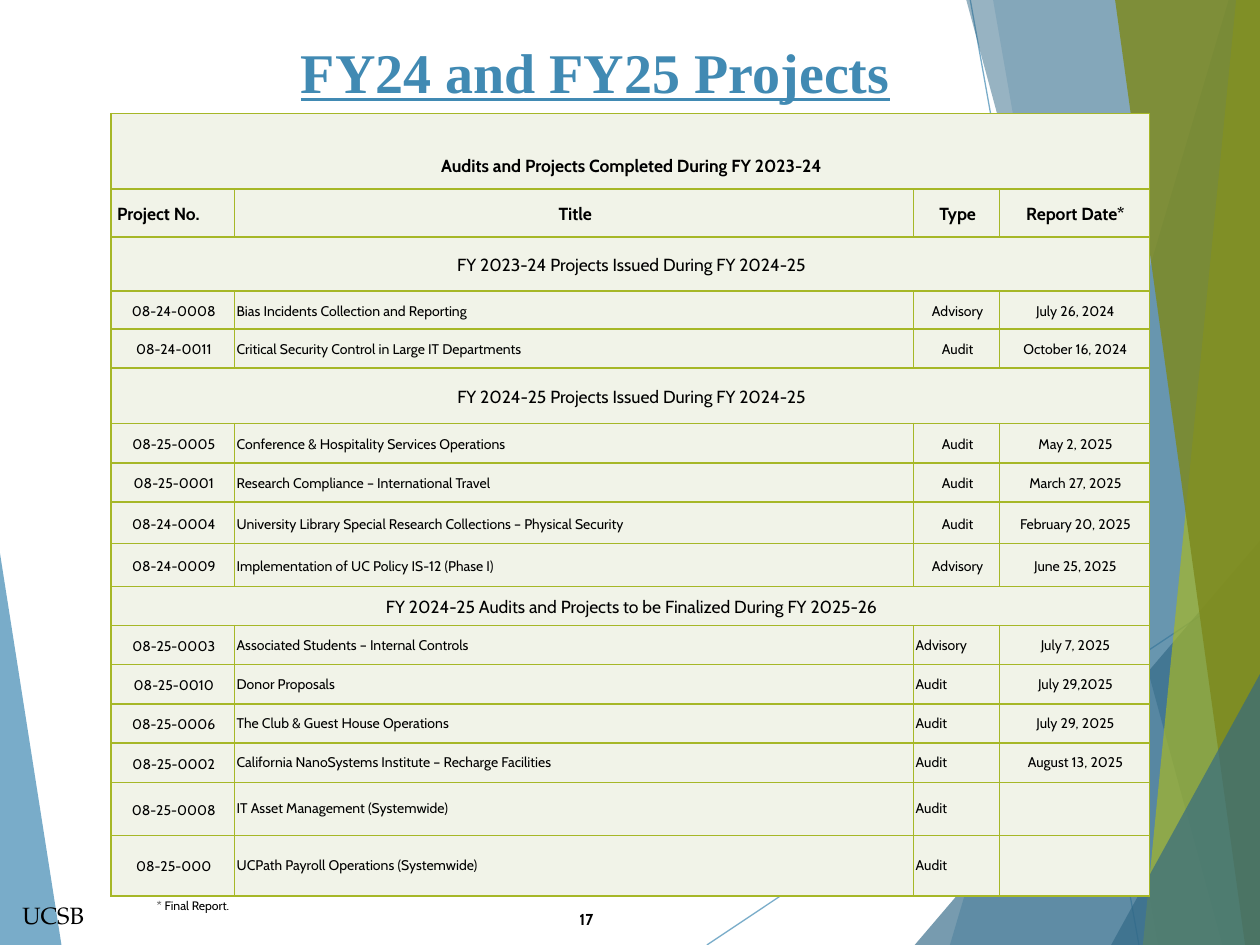
import pptx
import pptx.util
import pptx.dml.color
import pptx.enum.shapes
import pptx.enum.text
import pptx.oxml
import pptx.oxml.ns

Cm = pptx.util.Cm
Align = pptx.enum.text.PP_ALIGN
Anchor = pptx.enum.text.MSO_ANCHOR

COLORS = {
    "blue": "418AB3",
    "navy": "316886",
    "lime": "A6B727",
    "olive": "7D891D",
    "cell": "F1F3E8",
    "ink": "000000",
}
WIDTH, HEIGHT = 25.4, 19.05

FACETS = [
    ("blue", 70, [(0, 11.15), (1.24, 19.05), (0, 19.05)]),
    ("blue", 36, [(24.77, 0), (19.15, 19.05), (25.4, 19.05), (25.4, 0)]),
    ("blue", 20, [(20.02, 0), (23.34, 19.05), (25.4, 19.05), (25.4, 0)]),
    ("navy", 66, [(18.44, 19.05), (25.4, 10.9), (25.4, 19.05)]),
    ("navy", 50, [(19.48, 0), (24.64, 19.05), (25.4, 19.05), (25.4, 0)]),
    ("lime", 70, [(24.92, 0), (23.04, 19.05), (25.4, 19.05), (25.4, 0)]),
    ("olive", 82, [(22.48, 0), (25.1, 19.05), (25.4, 19.05), (25.4, 0)]),
    ("navy", 66, [(22.4, 19.05), (25.4, 13.59), (25.4, 19.05)]),
]
RAYS = [(14.25, 19.05, 25.4, 11.61), (19.56, 0, 22.96, 19.05)]

COLUMNS = [2.49, 13.69, 1.73, 3.02]
HEADER_ROWS = [
    (1.52, ["Audits and Projects Completed During FY 2023-24"]),
    (0.97, ["Project No.", "Title", "Type", "Report Date*"]),
]
ISSUED_ROWS = [
    (1.09, ["FY 2023-24 Projects Issued During FY 2024-25"]),
    (0.76, ["08-24-0008", "Bias Incidents Collection and Reporting", "Advisory", "July 26, 2024"]),
    (0.79, ["08-24-0011", "Critical Security Control in Large IT Departments", "Audit", "October 16, 2024"]),
    (1.12, ["FY 2024-25 Projects Issued During FY 2024-25"]),
    (0.79, ["08-25-0005", "Conference & Hospitality Services Operations", "Audit", "May 2, 2025"]),
    (0.79, ["08-25-0001", "Research Compliance – International Travel", "Audit", "March 27, 2025"]),
    (0.84, ["08-24-0004", "University Library Special Research Collections – Physical Security",
            "Audit", "February 20, 2025"]),
    (0.86, ["08-24-0009", "Implementation of UC Policy IS-12 (Phase I)", "Advisory", "June 25, 2025"]),
]
PENDING_ROWS = [
    (0.79, ["FY 2024-25 Audits and Projects to be Finalized During FY 2025-26"]),
    (0.79, ["08-25-0003", "Associated Students – Internal Controls", "Advisory", "July 7, 2025"]),
    (0.79, ["08-25-0010", "Donor Proposals", "Audit", "July 29,2025"]),
    (0.79, ["08-25-0006", "The Club & Guest House Operations", "Audit", "July 29, 2025"]),
    (0.79, ["08-25-0002", "California NanoSystems Institute – Recharge Facilities", "Audit", "August 13, 2025"]),
    (1.07, ["08-25-0008", "IT Asset Management (Systemwide)", "Audit", ""]),
    (1.22, ["08-25-000", "UCPath Payroll Operations (Systemwide)", "Audit", ""]),
]


def rgb(color):
    return pptx.dml.color.RGBColor.from_string(COLORS[color])


def apply(target, values):
    for name, value in values.items():
        setattr(target, name, value)


def set_alpha(fill_owner, percent):
    color = next(fill_owner.iter(pptx.oxml.ns.qn("a:srgbClr")))
    alpha = pptx.oxml.parse_xml(f'<a:alpha {pptx.oxml.ns.nsdecls("a")} val="{percent * 1000}"/>')
    color.append(alpha)


def style_text(para, text, color, para_format, font_format):
    apply(para, para_format)
    span = para.add_run() if text else para
    if text:
        span.text = text
    apply(span.font, font_format)
    span.font.color.rgb = rgb(color)


def add_label(page, box, text, color="ink", para_format=None, frame_format=None, **font_format):
    label = page.shapes.add_textbox(*map(Cm, box))
    apply(label.text_frame, {"word_wrap": True, **(frame_format or {})})
    style_text(label.text_frame.paragraphs[0], text, color, para_format or {}, font_format)


def add_rays(page, box):
    left, top = box[:2]
    for x1, y1, x2, y2 in RAYS:
        ray = page.shapes.add_connector(
            pptx.enum.shapes.MSO_CONNECTOR.STRAIGHT,
            Cm(left + x1), Cm(top + y1), Cm(left + x2), Cm(top + y2))
        ray.line.width = pptx.util.Pt(0.75)
        ray.line.color.rgb = rgb("blue")
        properties = ray._element.spPr
        set_alpha(properties, 70)
        properties.append(pptx.oxml.parse_xml(f'<a:effectLst {pptx.oxml.ns.nsdecls("a")}/>'))


def add_facet(page, box, color, opacity, points):
    corners = [(round(x * 100), round(y * 100)) for x, y in points]
    builder = page.shapes.build_freeform(*corners[0], scale=Cm(0.01))
    builder.add_line_segments(corners[1:], close=True)
    facet = builder.convert_to_shape(Cm(box[0]), Cm(box[1]))
    facet.shadow.inherit = False
    facet.fill.solid()
    facet.fill.fore_color.rgb = rgb(color)
    facet.line.fill.background()
    set_alpha(facet._element.spPr, opacity)


def add_backdrop(page, box):
    add_facet(page, box, *FACETS[0])
    add_rays(page, box)
    for facet in FACETS[1:]:
        add_facet(page, box, *facet)


def add_borders(cell):
    properties = cell._tc.get_or_add_tcPr()
    for position, side in enumerate(("lnL", "lnR", "lnT", "lnB")):
        properties.insert(position, pptx.oxml.parse_xml(
            f'<a:{side} {pptx.oxml.ns.nsdecls("a")} w="12700"><a:solidFill>'
            f'<a:srgbClr val="{COLORS["lime"]}"/></a:solidFill></a:{side}>'))


def alignment_for(row, column, is_header, is_pending):
    if is_header:
        return Align.LEFT if (row, column) == (1, 0) else Align.CENTER
    left_columns = (1, 2) if is_pending else (1,)
    return Align.LEFT if column in left_columns else Align.CENTER


def add_project_table(page, box):
    rows = HEADER_ROWS + ISSUED_ROWS + PENDING_ROWS
    pending_start = len(HEADER_ROWS + ISSUED_ROWS)
    table = page.shapes.add_table(len(rows), len(COLUMNS), *map(Cm, box)).table
    apply(table, {"first_row": False, "horz_banding": False})
    for column, width in zip(table.columns, COLUMNS):
        column.width = Cm(width)
    for r, (height, texts) in enumerate(rows):
        table.rows[r].height = Cm(height)
        is_header = r < len(HEADER_ROWS)
        is_band = len(texts) == 1
        is_pending = r > pending_start
        for c in range(len(COLUMNS)):
            cell = table.cell(r, c)
            apply(cell, {
                "margin_left": Cm(0.12 if (r, c) == (1, 0) else 0.04),
                "margin_right": 0, "margin_top": 0,
                "margin_bottom": Cm(0.25 if r == 0 else 0),
                "vertical_anchor": Anchor.BOTTOM if r == 0 else Anchor.MIDDLE,
            })
            cell.fill.solid()
            cell.fill.fore_color.rgb = rgb("cell")
            add_borders(cell)
            if is_band and c:
                continue
            style_text(
                cell.text_frame.paragraphs[0], texts[c], "ink",
                {"alignment": alignment_for(r, c, is_header, is_pending),
                 "line_spacing": 1.0 if is_pending and c else 1.15},
                {"name": "Cabin", "size": pptx.util.Pt(10 if is_header or is_band else 8),
                 "bold": is_header})
        if is_band:
            table.cell(r, 0).merge(table.cell(r, len(COLUMNS) - 1))


def add_title(page, box):
    add_label(page, box, "FY24 and FY25 Projects", "blue", {"alignment": Align.CENTER},
              {"vertical_anchor": Anchor.MIDDLE}, name="Times New Roman",
              size=pptx.util.Pt(32), bold=True, underline=True)


def add_footer(page, box):
    left, top = box[:2]
    add_label(page, (left + 11.07, top, 1.14, 1.02), "17", para_format={"alignment": Align.RIGHT},
              frame_format={"vertical_anchor": Anchor.MIDDLE},
              name="Cabin", size=pptx.util.Pt(9), bold=True)
    add_label(page, (left + 0.2, top, 1.78, 0.84), "UCSB", frame_format={"word_wrap": False},
              name="TeX Gyre Pagella", size=pptx.util.Pt(13.5))
    add_label(page, (left + 2.91, top - 0.05, 17.5, 0.56), "* Final Report.",
              name="Cabin", size=pptx.util.Pt(7))


def main():
    deck = pptx.Presentation()
    apply(deck, {"slide_width": Cm(WIDTH), "slide_height": Cm(HEIGHT)})
    page = deck.slides.add_slide(deck.slide_layouts[6])
    add_backdrop(page, (0, 0, WIDTH, HEIGHT))
    add_title(page, (1.3, 0.58, 21.41, 1.7))
    add_footer(page, (0, 18.03, WIDTH, 1.02))
    add_project_table(page, (2.24, 2.29, sum(COLUMNS), 15.72))
    deck.save("out.pptx")


if __name__ == "__main__":
    main()
